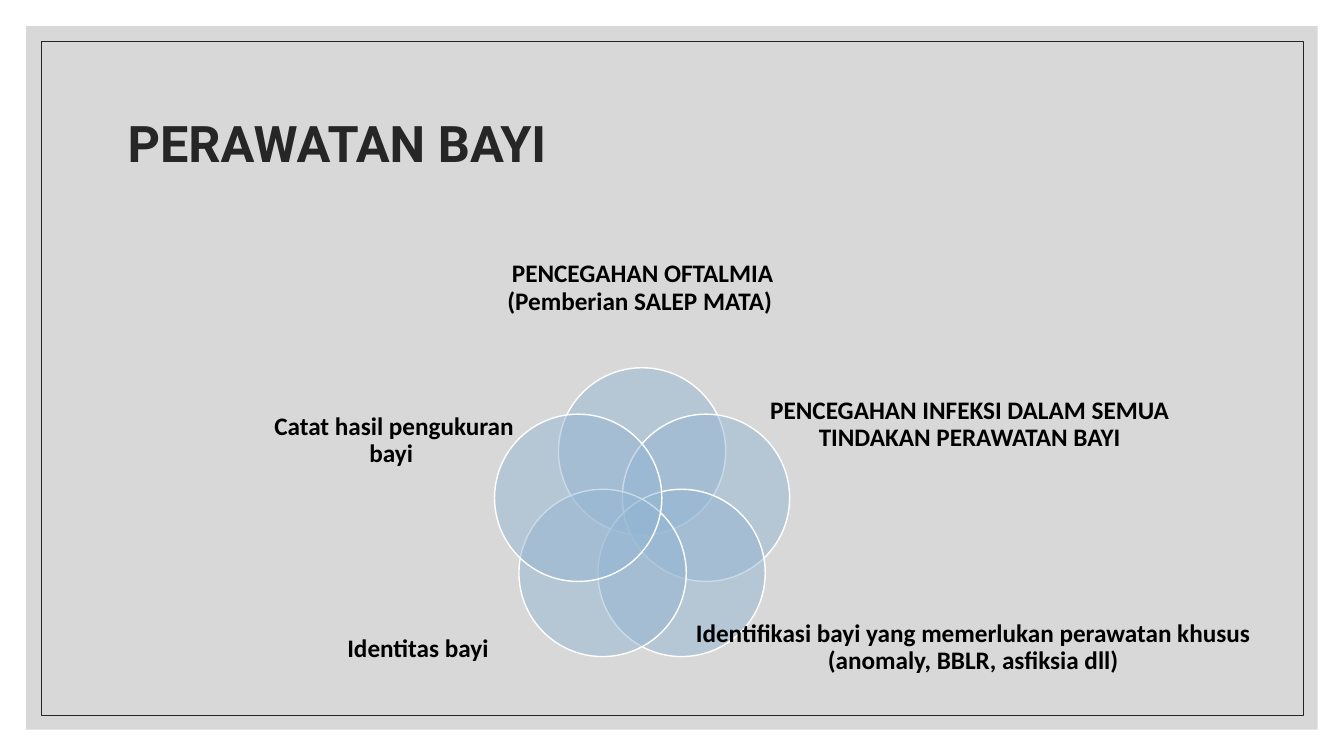
from math import cos, pi, sin

from lxml.etree import SubElement
from pptx import Presentation
from pptx.dml.color import RGBColor
from pptx.enum.shapes import MSO_SHAPE as Shape
from pptx.enum.text import MSO_ANCHOR as Anchor, PP_ALIGN as Align
from pptx.oxml.ns import qn
from pptx.util import Inches, Pt

GREY = RGBColor(0xBF, 0xBF, 0xBF)
CHARCOAL = RGBColor(0x26, 0x26, 0x26)
BLUE = RGBColor(0x94, 0xB6, 0xD2)
WHITE = RGBColor(0xFF, 0xFF, 0xFF)
BLACK = RGBColor(0x00, 0x00, 0x00)

COLUMNS, ROWS = 80, 45
PANEL_MARGIN, FRAME_MARGIN = 1.56, 2.44
RING_X, RING_Y, RING_RADIUS = 38.22, 30.87, 4
DIAMETER = 9.96

# Clockwise from the top circle: text, then left, top, width, height in cells
LABELS = [
    ("PENCEGAHAN OFTALMIA (Pemberian SALEP MATA) ", (28.44, 13.8, 19.62, 6.72)),
    ("PENCEGAHAN INFEKSI DALAM SEMUA TINDAKAN PERAWATAN BAYI",
     (43.02, 21.66, 29.4, 7.26)),
    ("Identifikasi bayi yang memerlukan perawatan khusus "
     "(anomaly, BBLR, asfiksia dll)", (40.02, 34.92, 35.82, 7.26)),
    ("Identitas bayi ", (17.34, 35.04, 15.42, 7.26)),
    ("Catat hasil pengukuran bayi ", (15.06, 22.62, 16.8, 7.26)),
]


class SlideBuilder:
    """Places styled elements on one slide, measured in grid cells."""

    def __init__(self, deck):
        self.column = deck.slide_width / COLUMNS
        self.row = deck.slide_height / ROWS
        self.page = deck.slides.add_slide(deck.slide_layouts[6])

    def cells(self, left, top, width, height):
        return (round(left * self.column), round(top * self.row),
                round(width * self.column), round(height * self.row))

    def shape(self, kind, area, fill=None, opacity=100, line=None, weight=1):
        shape = self.page.shapes.add_shape(kind, *self.cells(*area))
        shape.shadow.inherit = False
        if fill is None:
            shape.fill.background()
        else:
            shape.fill.solid()
            shape.fill.fore_color.rgb = fill
            color = shape._element.spPr.find(qn("a:solidFill")).find(qn("a:srgbClr"))
            SubElement(color, qn("a:alpha"), val=str(opacity * 1000))
        if line is None:
            shape.line.fill.background()
        else:
            shape.line.color.rgb = line
            shape.line.width = Pt(weight)

    def inset_rectangle(self, margin, **style):
        area = (margin, margin, COLUMNS - 2 * margin, ROWS - 2 * margin)
        self.shape(Shape.RECTANGLE, area, **style)

    def text(self, words, area, font, size, color, align=Align.LEFT, inset=0):
        box = self.page.shapes.add_textbox(*self.cells(*area))
        frame = box.text_frame
        frame.word_wrap = True
        frame.vertical_anchor = Anchor.MIDDLE
        frame.margin_left = frame.margin_right = Inches(inset)
        frame.margin_top = frame.margin_bottom = Inches(inset / 2)
        para = frame.paragraphs[0]
        para.alignment = align
        para.line_spacing = 0.9
        span = para.add_run()
        span.text = words
        span.font.name = font
        span.font.size = Pt(size)
        span.font.bold = True
        span.font.color.rgb = color


def main():
    deck = Presentation()
    deck.slide_width, deck.slide_height = Inches(13.33), Inches(7.5)
    slide = SlideBuilder(deck)

    slide.inset_rectangle(PANEL_MARGIN, fill=GREY, opacity=60)
    slide.inset_rectangle(FRAME_MARGIN, line=CHARCOAL, weight=0.5)
    slide.text("PERAWATAN BAYI", (7, 4.2, 66, 9), "Roboto", 36, CHARCOAL, inset=0.1)

    for index, (words, area) in enumerate(LABELS):
        angle = 2 * pi * index / len(LABELS)
        left = RING_X + RING_RADIUS * sin(angle) - DIAMETER / 2
        top = RING_Y - RING_RADIUS * cos(angle) - DIAMETER / 2
        slide.shape(Shape.OVAL, (left, top, DIAMETER, DIAMETER),
                    fill=BLUE, opacity=50, line=WHITE)
        slide.text(words, area, "Calibri", 18, BLACK, Align.CENTER)

    deck.save("out.pptx")


if __name__ == "__main__":
    main()
